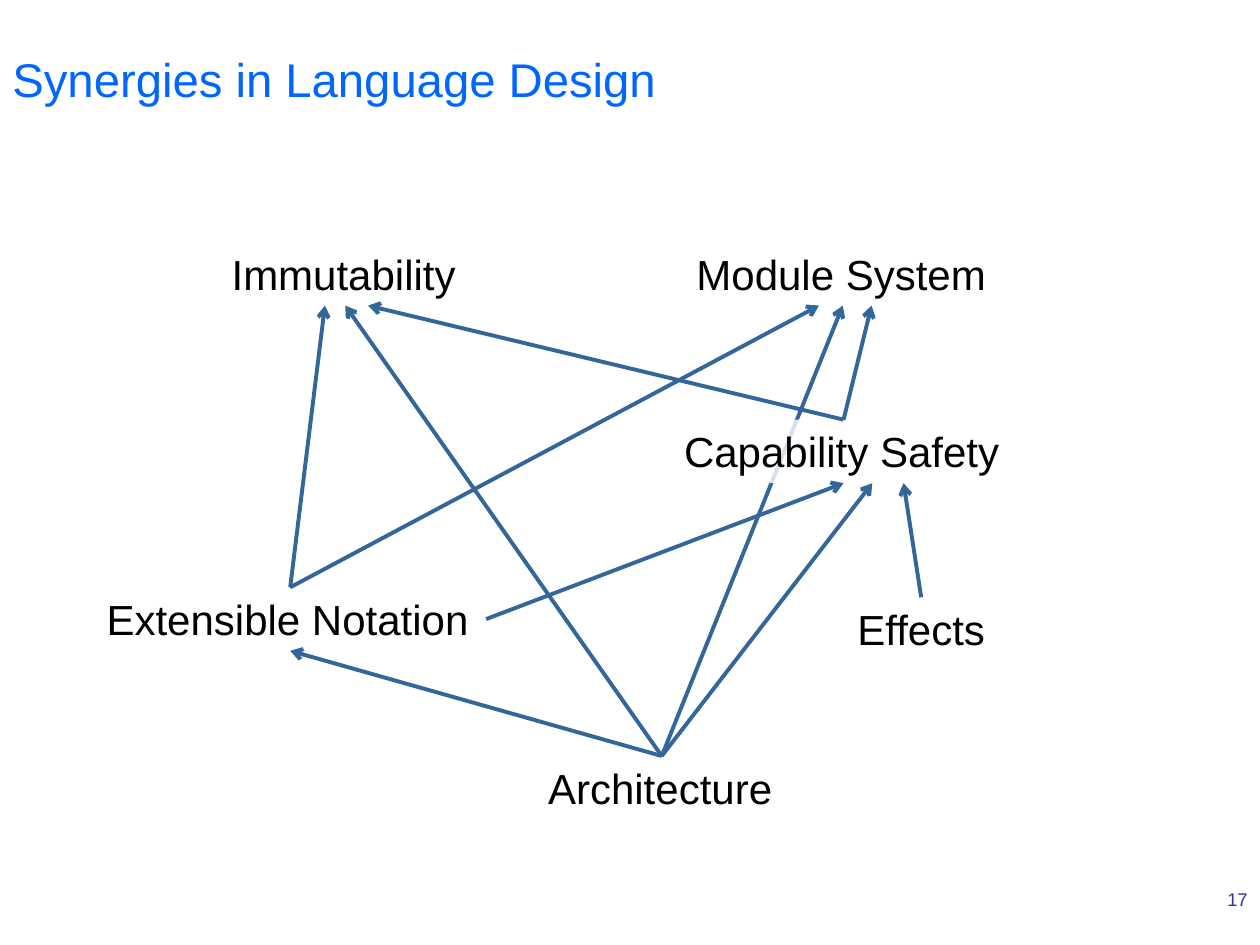
from lxml.etree import SubElement as Sub
from pptx import Presentation
from pptx.dml.color import RGBColor as Rgb
from pptx.enum.shapes import MSO_CONNECTOR as Link
from pptx.enum.text import MSO_ANCHOR as Anchor, MSO_AUTO_SIZE as Fit, PP_ALIGN as Align
from pptx.oxml.ns import qn
from pptx.util import Cm, Pt

COLORS = {"title": "0066FF", "text": "000000", "line": "336699",
          "number": "333399", "veil": "FFFFFF"}
FONT = "Arial"
TITLE = "Synergies in Language Design"
NUMBER = "17"
HIGH = 1.28

NODES = {
    "Extensible Notation": (1.9, 11.84, 7.9),
    "Capability Safety": (13.54, 8.46, 6.93),
    "Module System": (13.79, 4.88, 6.4),
    "Immutability": (4.42, 4.88, 5.08),
    "Effects": (17.02, 12.04, 3.1),
    "Architecture": (10.8, 15.24, 5.08),
}
VEILED = ("Extensible Notation", "Capability Safety")

UNDER = ("Architecture", "top", "Module System", 0)
ARROWS = [
    ("Extensible Notation", "top", "Immutability", -0.41),
    ("Capability Safety", "top", "Module System", 0.58),
    ("Extensible Notation", "top", "Module System", -0.48),
    ("Capability Safety", "top", "Immutability", 0.46),
    ("Architecture", "top", "Immutability", 0),
    ("Architecture", "top", "Extensible Notation", 0),
    ("Architecture", "top", "Capability Safety", 0.58),
    ("Effects", "top", "Capability Safety", 1.21),
    ("Extensible Notation", "right", "Capability Safety", 0),
]


def color(name):
    return Rgb.from_string(COLORS[name])


def add_text(slide, text, spot, size, hue, align=Align.LEFT):
    box = slide.shapes.add_textbox(*map(Cm, spot))
    frame = box.text_frame
    frame.word_wrap = True
    para = frame.paragraphs[0]
    para.text = text
    para.alignment = align
    para.font.name = FONT
    para.font.size = Pt(size)
    para.font.color.rgb = color(hue)
    return box


def add_node(slide, name):
    left, top, wide = NODES[name]
    align = Align.CENTER if name == "Effects" else Align.LEFT
    box = add_text(slide, name, (left, top, wide, HIGH), 24, "text", align)
    box.text_frame.word_wrap = False
    box.text_frame.auto_size = Fit.SHAPE_TO_FIT_TEXT
    if name in VEILED:
        box.fill.solid()
        box.fill.fore_color.rgb = color("veil")
        tint = box.fill._xPr.find(".//" + qn("a:srgbClr"))
        Sub(tint, qn("a:alpha"), val="80000")


def port(name, side, shift=0):
    left, top, wide = NODES[name]
    return {
        "top": (left + wide / 2 + shift, top),
        "bottom": (left + wide / 2 + shift, top + HIGH),
        "right": (left + wide, top + HIGH / 2),
    }[side]


def add_arrow(slide, start, side, end, shift):
    ends = port(start, side) + port(end, "bottom", shift)
    line = slide.shapes.add_connector(Link.STRAIGHT, *map(Cm, ends))
    line.line.color.rgb = color("line")
    line.line.width = Pt(2.25)
    Sub(line.line._get_or_add_ln(), qn("a:tailEnd"), type="arrow")
    Sub(line._element.spPr, qn("a:effectLst"))


def main():
    deck = Presentation()
    deck.slide_width, deck.slide_height = Cm(25.4), Cm(19.05)
    slide = deck.slides.add_slide(deck.slide_layouts[6])

    first, second, *rest = NODES
    add_node(slide, first)
    add_arrow(slide, *UNDER)
    add_node(slide, second)

    title = add_text(slide, TITLE, (0, 0, 25.4, 3.18), 27, "title")
    title.text_frame.vertical_anchor = Anchor.MIDDLE
    add_text(slide, NUMBER, (19.05, 17.78, 6.35, 0.69), 10.5, "number", Align.RIGHT)

    for name in rest:
        add_node(slide, name)
    for arrow in ARROWS:
        add_arrow(slide, *arrow)
    deck.save("out.pptx")


if __name__ == "__main__":
    main()
